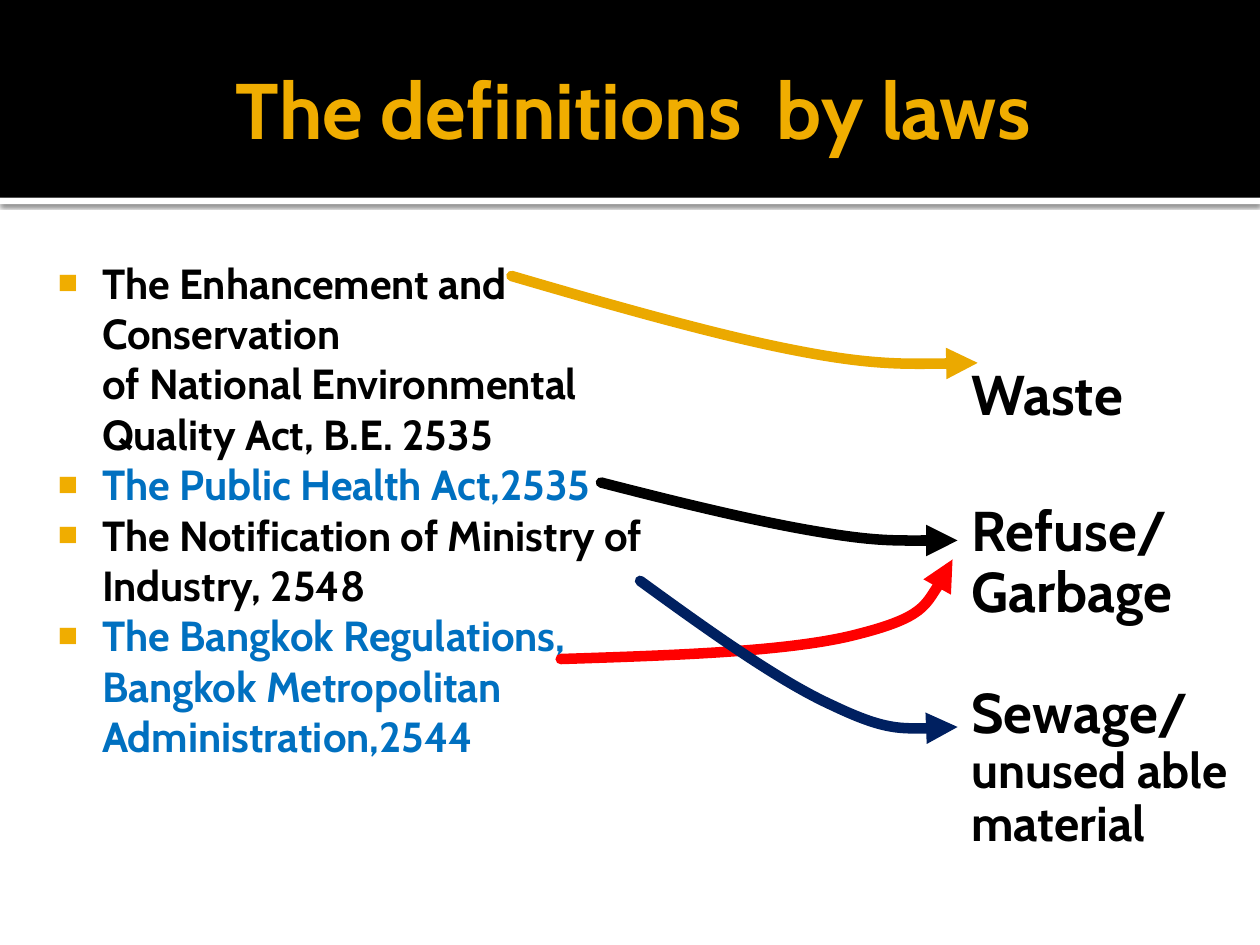
from lxml.etree import SubElement
from pptx import Presentation
from pptx.dml.color import RGBColor
from pptx.enum.shapes import MSO_SHAPE as Shape
from pptx.enum.text import MSO_ANCHOR as Anchor, PP_ALIGN as Align
from pptx.oxml.ns import qn
from pptx.util import Inches, Pt

FONT = "Cabin"
BLACK = RGBColor(0x00, 0x00, 0x00)
WHITE = RGBColor(0xFF, 0xFF, 0xFF)
GOLD = RGBColor(0xF0, 0xAD, 0x00)
DARK_GOLD = RGBColor(0xEB, 0xA9, 0x00)
BLUE = RGBColor(0x00, 0x70, 0xC0)
RED = RGBColor(0xFF, 0x00, 0x00)
NAVY = RGBColor(0x00, 0x20, 0x60)

TITLE = "The definitions  by laws"
LAWS = [
    ("The Enhancement and Conservation", BLACK, True),
    ("of National Environmental Quality Act, B.E. 2535", BLACK, False),
    ("The Public Health Act,2535", BLUE, True),
    ("The Notification of Ministry of Industry, 2548", BLACK, True),
    ("The Bangkok Regulations,", BLUE, True),
    ("Bangkok Metropolitan Administration,2544", BLUE, False),
]
TERMS = [
    ("Waste", 32, 0),
    ("Refuse/", 32, 43.5),
    ("Garbage", 32, 0),
    ("Sewage/", 32, 35),
    ("unused able", 28, 0),
    ("material", 28, 0),
]
ARROWS = [
    (DARK_GOLD, [(4.06, 2.19), (4.88, 2.43), (5.69, 2.66), (6.31, 2.78),
                 (6.92, 2.9), (7.34, 2.89), (7.76, 2.88)]),
    (BLACK, [(4.77, 3.83), (5.39, 3.99), (6.01, 4.14), (6.49, 4.22),
             (6.96, 4.3), (7.28, 4.29), (7.6, 4.29)]),
    (RED, [(4.45, 5.23), (5.38, 5.2), (6.3, 5.17), (6.82, 5.03),
           (7.33, 4.9), (7.45, 4.67), (7.56, 4.44)]),
    (NAVY, [(5.08, 4.61), (5.63, 5.01), (6.19, 5.41), (6.61, 5.6),
            (7.03, 5.8), (7.31, 5.79), (7.6, 5.77)]),
]


def add_band(page, top, height, color):
    band = page.shapes.add_shape(Shape.RECTANGLE, 0, Inches(top), Inches(10), Inches(height))
    band.shadow.inherit = False
    band.fill.solid()
    band.fill.fore_color.rgb = color
    band.line.fill.background()
    return band


def add_shadow(shape):
    effects = shape._element.spPr.find(qn("a:effectLst"))
    shadow = SubElement(effects, qn("a:outerShdw"), blurRad=str(Pt(2.5)),
                        dist=str(Pt(0.8)), dir="5400000", rotWithShape="0")
    color = SubElement(shadow, qn("a:srgbClr"), val=str(BLACK))
    SubElement(color, qn("a:alpha"), val="60000")


def add_box(page, place, insets):
    box = page.shapes.add_textbox(*map(Inches, place))
    frame = box.text_frame
    frame.word_wrap = True
    (frame.margin_left, frame.margin_top,
     frame.margin_right, frame.margin_bottom) = map(Inches, insets)
    return frame


def write(frame, index, text, size, color):
    para = frame.paragraphs[0] if index == 0 else frame.add_paragraph()
    para.text = text
    para.font.name = FONT
    para.font.size = Pt(size)
    para.font.bold = True
    para.font.color.rgb = color
    return para


def set_indent(para, left, first):
    props = para._p.get_or_add_pPr()
    props.set("marL", str(Inches(left)))
    props.set("indent", str(Inches(first)))
    return props


def add_bullet(props):
    bullet = [
        SubElement(props, qn("a:buClr")),
        SubElement(props, qn("a:buSzPct"), val="80000"),
        SubElement(props, qn("a:buFont"), typeface="Arial"),
        SubElement(props, qn("a:buChar"), char="■"),
    ]
    SubElement(bullet[0], qn("a:srgbClr"), val=str(GOLD))
    for position, part in enumerate(bullet):
        props.insert(position, part)


def add_curved_arrow(page, color, points):
    start, *rest = [(Inches(x), Inches(y)) for x, y in points]
    builder = page.shapes.build_freeform(*start)
    builder.add_line_segments(rest, close=False)
    arrow = builder.convert_to_shape()
    arrow.shadow.inherit = False
    arrow.fill.background()
    arrow.line.color.rgb = color
    arrow.line.width = Pt(6)
    outline = arrow.line._get_or_add_ln()
    outline.set("cap", "rnd")
    SubElement(outline, qn("a:round"))
    SubElement(outline, qn("a:tailEnd"), type="triangle")
    segments = list(arrow._element.iter(qn("a:lnTo")))
    route = segments[0].getparent()
    for first in range(0, len(segments), 3):
        curve = SubElement(route, qn("a:cubicBezTo"))
        for segment in segments[first:first + 3]:
            curve.append(segment[0])
            route.remove(segment)


def main():
    deck = Presentation()
    deck.slide_width, deck.slide_height = Inches(10), Inches(7.5)
    page = deck.slides.add_slide(deck.slide_layouts[6])

    add_shadow(add_band(page, 1.57, 0.05, WHITE))
    add_band(page, 0, 1.57, BLACK)

    heading = add_box(page, (0.5, 0.17, 9, 1.37), (0.1, 0.05, 0.05, 0.05))
    heading.vertical_anchor = Anchor.MIDDLE
    write(heading, 0, TITLE, 45, GOLD).alignment = Align.CENTER

    laws = add_box(page, (0.27, 1.94, 5.51, 4.96), (0.06, 0.1, 0.1, 0.05))
    for index, (text, color, bulleted) in enumerate(LAWS):
        para = write(laws, index, text, 24, color)
        props = set_indent(para, 0.48, -0.35 if bulleted else 0)
        if bulleted:
            add_bullet(props)

    terms = add_box(page, (7.52, 2.81, 2.48, 4.17), (0.06, 0.1, 0.1, 0.05))
    for index, (text, size, gap) in enumerate(TERMS):
        para = write(terms, index, text, size, BLACK)
        para.line_spacing = 0.9
        para.space_before = Pt(gap)
        set_indent(para, 0.94, -0.81)

    for color, points in ARROWS:
        add_curved_arrow(page, color, points)

    deck.save("out.pptx")


if __name__ == "__main__":
    main()
